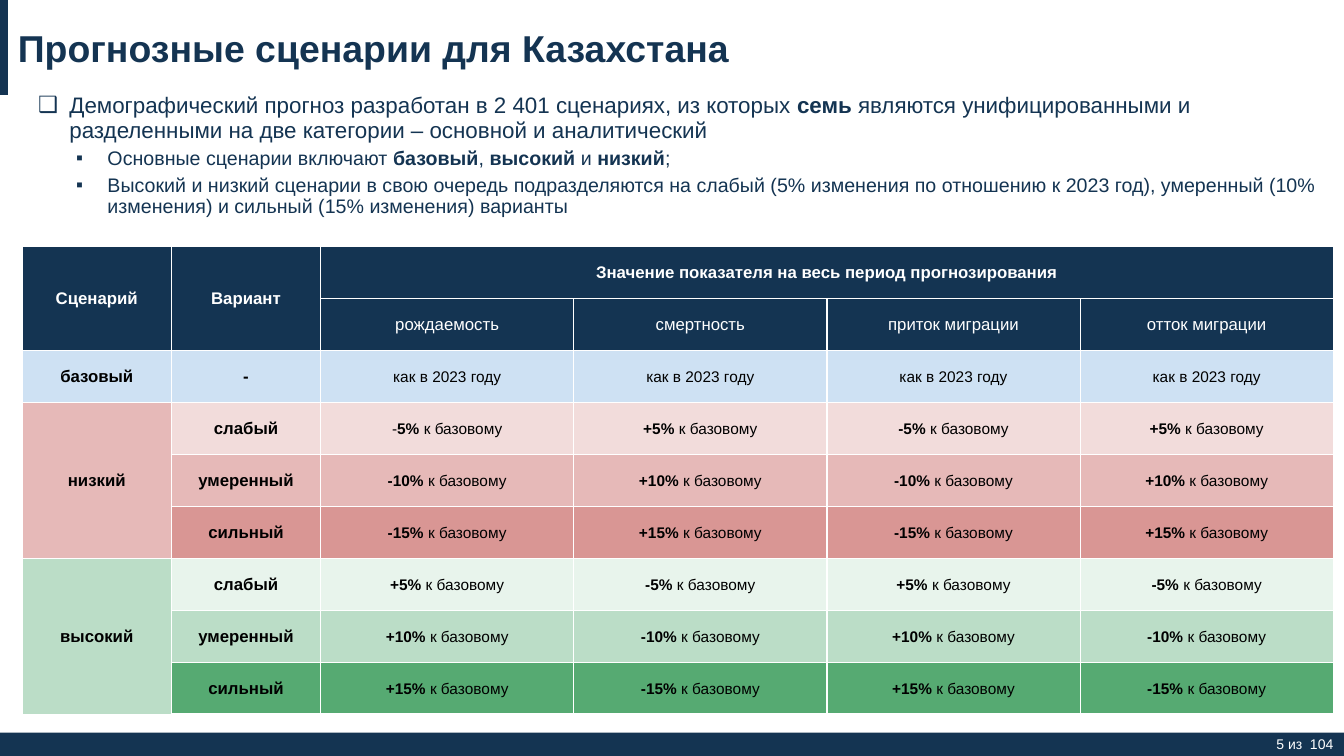
from dataclasses import dataclass

from lxml import etree
from pptx import Presentation
from pptx import util as u
from pptx.dml.color import RGBColor
from pptx.enum import shapes, text
from pptx.oxml import ns
from pptx.table import Table
from pptx.text.text import TextFrame


@dataclass(frozen=True)
class Theme:
    font: str = "Arial"
    navy: str = "143452"
    white: str = "FFFFFF"
    black: str = "000000"
    base: str = "CEE1F3"
    title: float = 26.7
    lead: float = 16
    detail: float = 14
    heading: float = 12
    value: float = 11
    page: float = 10
    border: float = 1
    last_border: float = 2.25


@dataclass(frozen=True)
class Box:
    left: float
    top: float
    width: float
    height: float

    def lengths(self) -> list[u.Cm]:
        return [u.Cm(n) for n in (self.left, self.top, self.width, self.height)]


@dataclass(frozen=True)
class Bullet:
    words: str
    mark: str
    size: float
    indent: float
    after: float


@dataclass(frozen=True)
class Variant:
    name: str
    percent: int
    fill: str
    bold_first_sign: bool = True


@dataclass(frozen=True)
class Scenario:
    name: str
    fill: str
    signs: str
    variants: tuple[Variant, ...]


THEME = Theme()
SLIDE_WIDTH, SLIDE_HEIGHT = 33.87, 19.05
HANGING = 0.79
SCENARIO_WIDTH, INDICATOR_WIDTH, ROW_HEIGHT = 3.76, 6.38, 1.31
INDICATORS = ("рождаемость", "смертность", "приток миграции", "отток миграции")

BULLETS = (
    Bullet("Демографический прогноз разработан в 2 401 сценариях, из которых **семь** являются "
           "унифицированными и разделенными на две категории – основной и аналитический",
           "❑", THEME.lead, HANGING, 4),
    Bullet("Основные сценарии включают **базовый**, **высокий** и **низкий**;",
           "▪", THEME.detail, 1.75, 4),
    Bullet("Высокий и низкий сценарии в свою очередь подразделяются на слабый (5% изменения по "
           "отношению к 2023 год), умеренный (10% изменения) и сильный (15% изменения) варианты",
           "▪", THEME.detail, 1.75, 12),
)

SCENARIOS = (
    Scenario("низкий", "E6B9B8", "-+-+", (
        Variant("слабый", 5, "F2DCDB", bold_first_sign=False),
        Variant("умеренный", 10, "E6B9B8"),
        Variant("сильный", 15, "D99694"))),
    Scenario("высокий", "BBDDC7", "+-+-", (
        Variant("слабый", 5, "E8F4EC"),
        Variant("умеренный", 10, "BBDDC7"),
        Variant("сильный", 15, "56AA72"))),
)


def write(frame: TextFrame, words: str, *, size: float, color: str, bold: bool = False,
          align: text.PP_ALIGN = text.PP_ALIGN.LEFT, new: bool = False):
    """Write one paragraph; words between double asterisks are bold."""
    paragraph = frame.add_paragraph() if new else frame.paragraphs[0]
    paragraph.alignment = align
    for index, part in enumerate(words.split("**")):
        if part:
            run = paragraph.add_run()
            run.text = part
            run.font.name = THEME.font
            run.font.size = u.Pt(size)
            run.font.bold = bold or index % 2 == 1
            run.font.color.rgb = RGBColor.from_string(color)
    return paragraph


def add_bar(slide, box: Box) -> None:
    shape = slide.shapes.add_shape(shapes.MSO_SHAPE.RECTANGLE, *box.lengths())
    shape.shadow.inherit = False
    shape.fill.solid()
    shape.fill.fore_color.rgb = RGBColor.from_string(THEME.navy)
    shape.line.fill.background()


def add_frame(slide, box: Box, anchor: text.MSO_ANCHOR = text.MSO_ANCHOR.MIDDLE) -> TextFrame:
    frame = slide.shapes.add_textbox(*box.lengths()).text_frame
    frame.word_wrap = True
    frame.vertical_anchor = anchor
    return frame


def add_bullets(frame: TextFrame) -> None:
    for index, bullet in enumerate(BULLETS):
        paragraph = write(frame, bullet.words, size=bullet.size, color=THEME.navy, new=index > 0)
        paragraph.line_spacing = 0.9
        paragraph.space_after = u.Pt(bullet.after)
        properties = paragraph._p.get_or_add_pPr()
        properties.set("marL", str(u.Cm(bullet.indent)))
        properties.set("indent", str(-u.Cm(HANGING)))
        etree.SubElement(properties, ns.qn("a:buFont")).set("typeface", THEME.font)
        etree.SubElement(properties, ns.qn("a:buChar")).set("char", bullet.mark)


def style_cells(table: Table) -> None:
    last_row = len(table.rows) - 1
    for row_index, row in enumerate(table.rows):
        for cell in row.cells:
            cell.vertical_anchor = text.MSO_ANCHOR.MIDDLE
            for side in "LRTB":
                thick = side == "B" and row_index == last_row
                width = THEME.last_border if thick else THEME.border
                line = etree.SubElement(cell._tc.get_or_add_tcPr(), ns.qn(f"a:ln{side}"))
                line.set("w", str(u.Pt(width)))
                fill = etree.SubElement(line, ns.qn("a:solidFill"))
                etree.SubElement(fill, ns.qn("a:srgbClr")).set("val", THEME.white)


def fill_cell(table: Table, row: int, column: int, words: str, fill: str, *,
              size: float = THEME.heading, color: str = THEME.black, bold: bool = True,
              rows: int = 1, columns: int = 1) -> None:
    cell = table.cell(row, column)
    if rows * columns > 1:
        cell.merge(table.cell(row + rows - 1, column + columns - 1))
    cell.fill.solid()
    cell.fill.fore_color.rgb = RGBColor.from_string(fill)
    write(cell.text_frame, words, size=size, color=color, bold=bold, align=text.PP_ALIGN.CENTER)


def fill_header(table: Table) -> None:
    for column, words in enumerate(("Сценарий", "Вариант")):
        fill_cell(table, 0, column, words, THEME.navy, color=THEME.white, rows=2)
    fill_cell(table, 0, 2, "Значение показателя на весь период прогнозирования", THEME.navy,
              color=THEME.white, columns=len(INDICATORS))
    for column, words in enumerate(INDICATORS, 2):
        fill_cell(table, 1, column, words, THEME.navy, color=THEME.white, bold=False)


def fill_scenarios(table: Table) -> None:
    for column, words in enumerate(("базовый", "-")):
        fill_cell(table, 2, column, words, THEME.base)
    for column in range(2, 2 + len(INDICATORS)):
        fill_cell(table, 2, column, "как в 2023 году", THEME.base, size=THEME.value, bold=False)
    row = 3
    for scenario in SCENARIOS:
        fill_cell(table, row, 0, scenario.name, scenario.fill, rows=len(scenario.variants))
        for variant in scenario.variants:
            fill_cell(table, row, 1, variant.name, variant.fill)
            for column, sign in enumerate(scenario.signs, 2):
                bold_sign = column > 2 or variant.bold_first_sign
                start = f"**{sign}" if bold_sign else f"{sign}**"
                fill_cell(table, row, column, f"{start}{variant.percent}%** к базовому",
                          variant.fill, size=THEME.value, bold=False)
            row += 1


def add_scenario_table(slide) -> None:
    row_count = 3 + sum(len(scenario.variants) for scenario in SCENARIOS)
    widths = [SCENARIO_WIDTH] * 2 + [INDICATOR_WIDTH] * len(INDICATORS)
    box = Box(0.56, 6.22, sum(widths), row_count * ROW_HEIGHT)
    table = slide.shapes.add_table(row_count, len(widths), *box.lengths()).table
    table.first_row = table.horz_banding = False
    for column, width in zip(table.columns, widths):
        column.width = u.Cm(width)
    for row in table.rows:
        row.height = u.Cm(ROW_HEIGHT)
    style_cells(table)
    fill_header(table)
    fill_scenarios(table)


def main() -> None:
    presentation = Presentation()
    presentation.slide_width, presentation.slide_height = u.Cm(SLIDE_WIDTH), u.Cm(SLIDE_HEIGHT)
    slide = presentation.slides.add_slide(presentation.slide_layouts[6])
    add_bar(slide, Box(0, 18.46, SLIDE_WIDTH, 0.59))
    add_bar(slide, Box(0, 0, 0.2, 2.39))
    add_bullets(add_frame(slide, Box(0.71, 2.26, 32.74, 16.31), text.MSO_ANCHOR.TOP))
    add_scenario_table(slide)
    title = add_frame(slide, Box(0.2, 0, 33.66, 2.39))
    write(title, "Прогнозные сценарии для Казахстана", size=THEME.title, color=THEME.navy, bold=True)
    page = add_frame(slide, Box(30.58, 18.46, 3.02, 0.59))
    page.margin_right = 0
    write(page, "5 из  104", size=THEME.page, color=THEME.white, align=text.PP_ALIGN.RIGHT)
    presentation.save("out.pptx")


if __name__ == "__main__":
    main()
